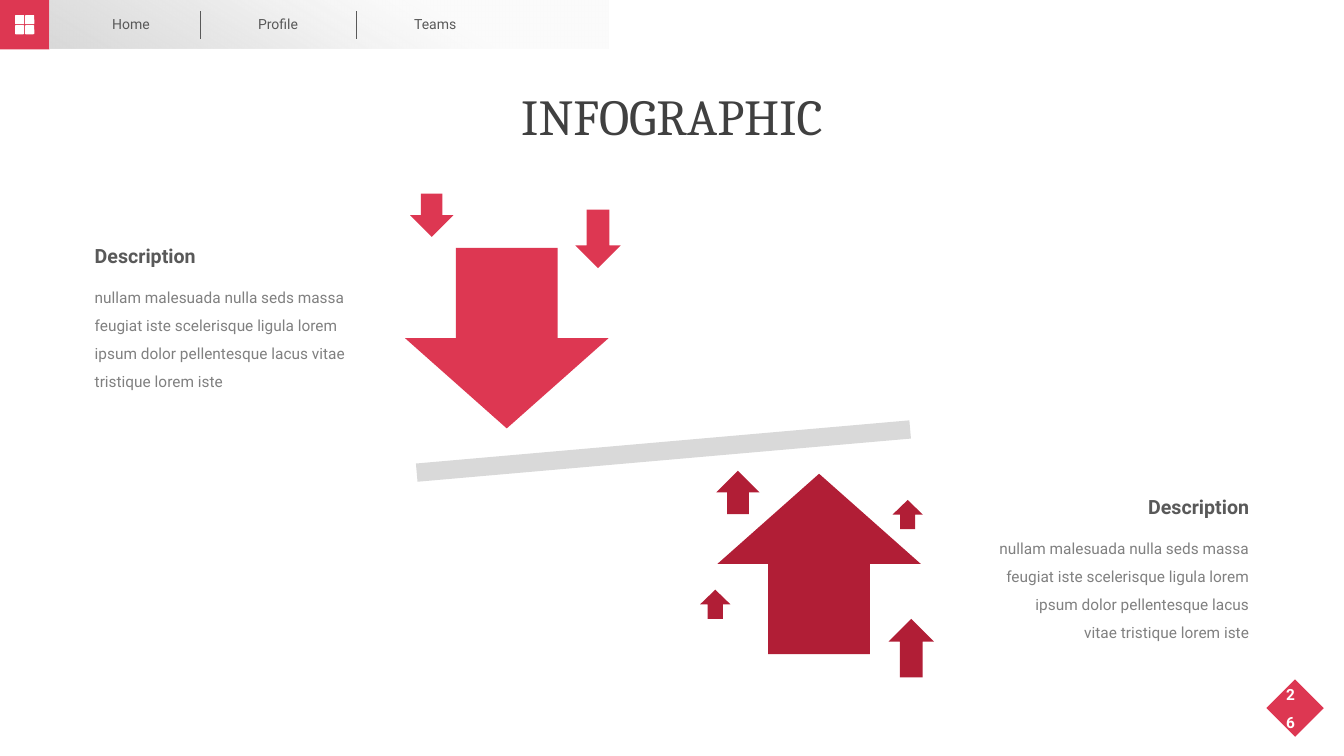
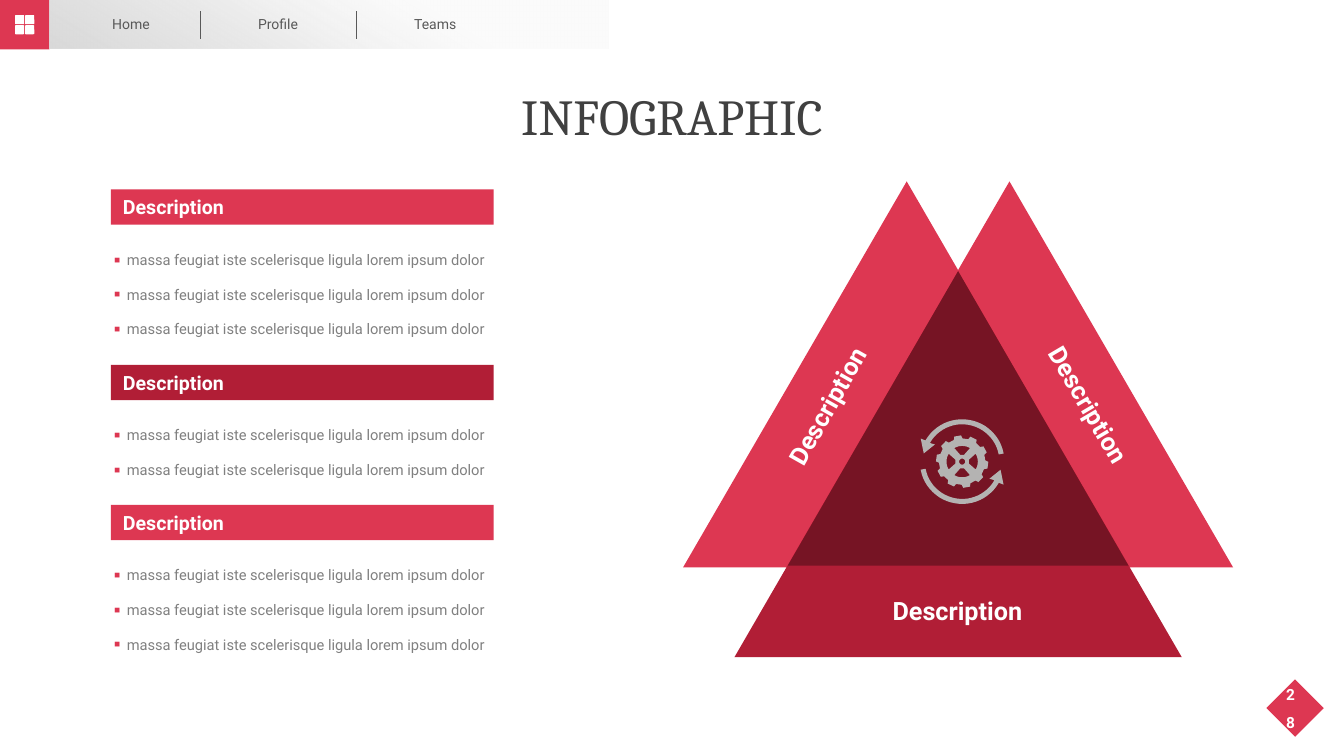
from math import cos, radians, sin

from lxml import etree
from pptx import Presentation
from pptx.dml.color import RGBColor
from pptx.enum.shapes import MSO_CONNECTOR, MSO_SHAPE
from pptx.enum.text import MSO_ANCHOR, MSO_AUTO_SIZE, PP_ALIGN
from pptx.oxml import parse_xml
from pptx.oxml.ns import nsdecls, qn
from pptx.util import Inches, Pt

WIDTH, HEIGHT = 13.34, 7.5
COLORS = {
    "red": "DD3752", "crimson": "B11E36", "wine": "761424",
    "title": "404040", "heading": "595959", "body": "808080",
    "beam": "D9D9D9", "gear": "B4B3B2", "white": "FFFFFF",
}
TITLE_FONT, BODY_FONT = "Cambria", "Roboto"
LEFT, CENTER, RIGHT = PP_ALIGN.LEFT, PP_ALIGN.CENTER, PP_ALIGN.RIGHT

TITLE = "INFOGRAPHIC"
LABEL = "Description"
HEADER_HEIGHT = 0.49
NAV_ITEMS = [("Home", 1.3), ("Profile", 2.76), ("Teams", 4.32)]
NAV_ITEM_WIDTH = 1
NAV_DIVIDERS = [1.99, 3.54]
NAV_FADE = [(30, "F2F2F2", 30), (65, "D9D9D9", 55), (100, "D9D9D9", 100)]
NAV_FADE_ANGLE = 120

STORY_START = ("nullam malesuada nulla seds massa feugiat iste scelerisque ligula lorem "
               "ipsum dolor pellentesque lacus")
STORY_END = "vitae tristique lorem iste"
STORIES = [(0.94, 2.3, 2.51, LEFT, " "), (9.91, 4.79, 2.49, RIGHT, "\v")]
STORY_DROP = 0.47
BEAM = (3.24, 4.09, 6.69, 0.77)
BEAM_TILT = -5
WEIGHTS = [(4.02, 2.46, 2.02, 1.79), (5.71, 2.08, 0.45, 0.58), (4.07, 1.92, 0.43, 0.43)]
LIFTS = [(7.12, 4.7, 2.02, 1.79), (8.82, 6.14, 0.45, 0.58), (7.11, 4.67, 0.43, 0.43),
         (6.95, 5.85, 0.3, 0.29), (8.86, 4.96, 0.3, 0.29)]

POINT = "massa feugiat iste scelerisque ligula lorem ipsum dolor"
SECTIONS = [(1.88, "red", [POINT] * 3), (3.62, "crimson", [POINT] * 2),
            (5.01, "red", [POINT] * 3)]
SECTION_LEFT, SECTION_WIDTH, SECTION_BAR, POINTS_DROP = 1.1, 3.8, 0.35, 0.52
TRIANGLE_SIZE = (4.44, 3.83)
TRIANGLES = [(6.78, 1.8, *TRIANGLE_SIZE, "red"), (7.8, 1.8, *TRIANGLE_SIZE, "red"),
             (7.29, 2.69, *TRIANGLE_SIZE, "crimson"), (7.82, 2.69, 3.38, 2.92, "wine")]
SIDE_LABELS = [(8.86, 5.91, 0), (7.56, 3.87, -60.5), (10.16, 3.87, 59.5)]
GEAR_CENTER = (9.55, 4.58)
GEAR_TEETH, GEAR_PHASE = 10, 8
TOOTH = [(0.23, -11), (0.26, -7.5), (0.26, 7.5), (0.23, 11)]
ARROW_HEAD = [(0.32, 212), (0.39, 192), (0.47, 209)]


def color(name):
    return RGBColor.from_string(COLORS[name])


def add_figure(slide, kind, box, fill, tilt=0):
    figure = slide.shapes.add_shape(kind, *map(Inches, box))
    paint(figure, fill)
    figure.rotation = tilt
    return figure


def paint(figure, fill):
    figure.shadow.inherit = False
    figure.fill.solid()
    figure.fill.fore_color.rgb = color(fill)
    figure.line.fill.background()


def write(frame, lines, size, ink, align=LEFT, bold=False, font=BODY_FONT,
          spacing=None, gap=0):
    for index, line in enumerate(lines):
        paragraph = frame.paragraphs[0] if index == 0 else frame.add_paragraph()
        paragraph.text = line
        paragraph.alignment = align
        paragraph.line_spacing = spacing
        paragraph.space_after = Pt(gap)
        for run in paragraph.runs:
            face = run.font
            face.name, face.size, face.bold = font, Pt(size), bold
            face.color.rgb = color(ink)


def add_text(slide, box, lines, size, ink, wrap=True, anchor=MSO_ANCHOR.TOP, tilt=0, **style):
    area = slide.shapes.add_textbox(*map(Inches, box))
    area.rotation = tilt
    frame = area.text_frame
    frame.margin_left = frame.margin_right = frame.margin_top = frame.margin_bottom = 0
    frame.word_wrap = wrap
    frame.vertical_anchor = anchor
    frame.auto_size = MSO_AUTO_SIZE.SHAPE_TO_FIT_TEXT
    write(frame, lines, size, ink, **style)
    return frame


def fade(figure, stops, angle):
    marks = "".join(
        f'<a:gs pos="{at * 1000}"><a:srgbClr val="{tone}">'
        f'<a:alpha val="{alpha * 1000}"/></a:srgbClr></a:gs>'
        for at, tone, alpha in stops)
    gradient = parse_xml(
        f'<a:gradFill {nsdecls("a")} rotWithShape="1"><a:gsLst>{marks}</a:gsLst>'
        f'<a:lin ang="{angle * 60000}" scaled="0"/></a:gradFill>')
    properties = figure._element.spPr
    properties.replace(properties.find(qn("a:solidFill")), gradient)


def add_bullets(frame, indent):
    for paragraph in frame.paragraphs:
        properties = paragraph._p.get_or_add_pPr()
        properties.set("marL", str(Inches(indent)))
        properties.set("indent", str(-Inches(indent)))
        tint = etree.SubElement(properties, qn("a:buClr"))
        etree.SubElement(tint, qn("a:srgbClr"), val=COLORS["red"])
        etree.SubElement(properties, qn("a:buSzPct"), val="130000")
        etree.SubElement(properties, qn("a:buFont"), typeface="Arial")
        etree.SubElement(properties, qn("a:buChar"), char="▪")


def add_divider(slide, x):
    divider = slide.shapes.add_connector(
        MSO_CONNECTOR.STRAIGHT, *map(Inches, (x, 0.11, x, 0.39)))
    divider.line.color.rgb = color("heading")
    divider.line.width = Pt(0.5)
    etree.SubElement(divider._element.spPr, qn("a:effectLst"))


def start_slide(deck, number):
    slide = deck.slides.add_slide(deck.slide_layouts[6])
    add_text(slide, (4.91, 0.84, 3.52, 0.61), [TITLE], 36, "title",
             align=CENTER, font=TITLE_FONT)
    add_figure(slide, MSO_SHAPE.RECTANGLE, (0, 0, HEADER_HEIGHT, HEADER_HEIGHT), "red")
    for tile in range(4):
        row, column = divmod(tile, 2)
        add_figure(slide, MSO_SHAPE.ROUNDED_RECTANGLE,
                   (0.15 + column * 0.1, 0.15 + row * 0.1, 0.09, 0.09),
                   "white").adjustments[0] = 0.08
    band = add_figure(slide, MSO_SHAPE.RECTANGLE, (HEADER_HEIGHT, 0, 5.55, 0.48), "beam")
    fade(band, NAV_FADE, NAV_FADE_ANGLE)
    for item, middle in NAV_ITEMS:
        add_text(slide, (middle - NAV_ITEM_WIDTH / 2, 0.15, NAV_ITEM_WIDTH, 0.17), [item],
                 10, "heading", align=CENTER)
    for x in NAV_DIVIDERS:
        add_divider(slide, x)
    add_figure(slide, MSO_SHAPE.DIAMOND, (12.57, 6.74, 0.57, 0.57), "red")
    add_text(slide, (12.76, 6.71, 0.1, 0.55), [str(number)], 11, "white",
             anchor=MSO_ANCHOR.MIDDLE, align=CENTER, bold=True, spacing=1.5)
    return slide


def polar(points, turn=0):
    return [(r * cos(radians(a + turn)), r * sin(radians(a + turn))) for r, a in points]


def arc(radius, start, end, steps=24):
    return [(radius, start + (end - start) * step / steps) for step in range(steps + 1)]


def add_gear(slide):
    teeth = [(r, a + GEAR_PHASE + tooth * 360 / GEAR_TEETH)
             for tooth in range(GEAR_TEETH) for r, a in TOOTH]
    window = arc(0.155, -30, 30) + [(0.07, 16), (0.07, -16)]
    sweep = arc(0.42, 210, 349) + arc(0.37, 349, 210) + ARROW_HEAD
    outlines = [polar(teeth), polar(arc(0.03, 0, 360))]
    outlines += [polar(window, turn) for turn in range(0, 360, 90)]
    outlines += [polar(sweep, turn) for turn in (0, 180)]
    placed = [[(1000 * (GEAR_CENTER[0] + x), 1000 * (GEAR_CENTER[1] + y)) for x, y in outline]
              for outline in outlines]
    builder = slide.shapes.build_freeform(*placed[0][0], scale=Inches(1) / 1000)
    for index, outline in enumerate(placed):
        if index:
            builder.move_to(*outline[0])
        builder.add_line_segments(outline[1:], close=True)
    paint(builder.convert_to_shape(), "gear")


def build_balance(deck):
    slide = start_slide(deck, 26)
    add_figure(slide, MSO_SHAPE.MATH_MINUS, BEAM, "beam", BEAM_TILT)
    for kind, boxes, fill in ((MSO_SHAPE.DOWN_ARROW, WEIGHTS, "red"),
                              (MSO_SHAPE.UP_ARROW, LIFTS, "crimson")):
        for box in boxes:
            add_figure(slide, kind, box, fill)
    for left, top, width, align, joint in STORIES:
        add_text(slide, (left, top, width, 0.31), [LABEL], 14, "heading",
                 align=align, bold=True, spacing=1.5)
        add_text(slide, (left, top + STORY_DROP, width, 1.08),
                 [STORY_START + joint + STORY_END], 11, "body", align=align, spacing=1.5)


def build_triangles(deck):
    slide = start_slide(deck, 28)
    for *box, fill in TRIANGLES:
        add_figure(slide, MSO_SHAPE.ISOSCELES_TRIANGLE, box, fill)
    add_gear(slide)
    for left, top, tilt in SIDE_LABELS:
        add_text(slide, (left, top, 1.3, 0.3), [LABEL], 18, "white",
                 wrap=False, tilt=tilt, bold=True)
    for top, fill, points in SECTIONS:
        bar = add_figure(slide, MSO_SHAPE.RECTANGLE,
                         (SECTION_LEFT, top, SECTION_WIDTH, SECTION_BAR), fill)
        bar.text_frame.margin_left = Inches(0.12)
        bar.text_frame.margin_top = bar.text_frame.margin_bottom = 0
        bar.text_frame.vertical_anchor = MSO_ANCHOR.MIDDLE
        write(bar.text_frame, [LABEL], 14, "white", bold=True)
        listing = add_text(slide, (1.13, top + POINTS_DROP, SECTION_WIDTH, 0.35 * len(points)),
                           points, 10.5, "body", spacing=1.5, gap=5.9)
        add_bullets(listing, 0.13)


def main():
    deck = Presentation()
    deck.slide_width, deck.slide_height = Inches(WIDTH), Inches(HEIGHT)
    build_balance(deck)
    build_triangles(deck)
    deck.save("out.pptx")


if __name__ == "__main__":
    main()
